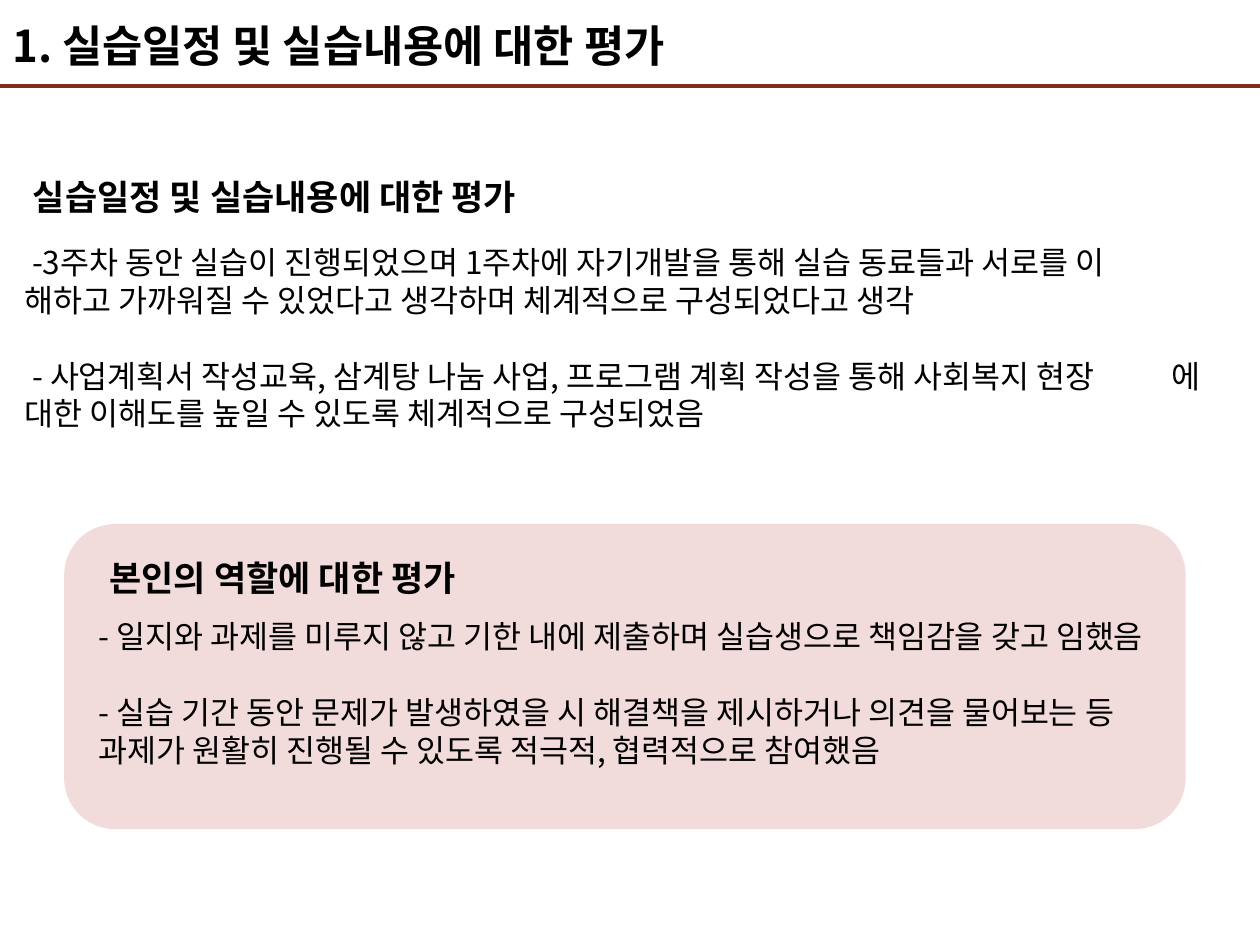
from pptx import Presentation
from pptx.dml.color import RGBColor
from pptx.enum.shapes import MSO_CONNECTOR as Line, MSO_SHAPE as Shape
from pptx.oxml.ns import qn
from pptx.util import Inches, Pt
from lxml.etree import SubElement as Sub

FONT = "Noto Sans CJK KR"
COLS, ROWS = 100, 75  # slide grid
CELL = Inches(0.1)
INK, RED, PINK = "000000", "802D20", "F2DCDB"
LEAD = 1.2  # line height per point of text


def color(code):
    return RGBColor.from_string(code)


def cells(*spans):
    return [round(span * CELL) for span in spans]


def add_run(para, words, size, bold):
    run = para.add_run()
    run.text = words
    font = run.font
    font.name, font.size, font.bold = FONT, Pt(size), bold
    font.color.rgb = color(INK)
    Sub(run._r.get_or_add_rPr(), qn("a:ea")).set("typeface", FONT)


def add_text(shapes, box, paras, size, bold=False, tab=None):
    """Each paragraph is a list of lines; paragraphs stand one line apart."""
    frame = shapes.add_textbox(*cells(*box)).text_frame
    frame.word_wrap = True
    frame.margin_top = Inches(0.08)
    for i, lines in enumerate(paras):
        para = frame.paragraphs[0] if i == 0 else frame.add_paragraph()
        para.line_spacing = Pt(size * LEAD)
        para.space_before = Pt(size * LEAD if i else 0)
        if tab:
            stops = Sub(para._p.get_or_add_pPr(), qn("a:tabLst"))
            Sub(stops, qn("a:tab"), pos=str(cells(tab)[0]), algn="l")
        for j, line in enumerate(lines):
            if j:
                para.add_line_break()
            add_run(para, line, size, bold)


def add_head(slide, box):
    """Slide title over a full-width rule."""
    x, y, w, h = box
    add_text(slide.shapes, (x, y + 0.7, 0.752 * w, 5.2),
             [["1. 실습일정 및 실습내용에 대한 평가"]], 25, True)
    rule = slide.shapes.add_connector(
        Line.STRAIGHT, *cells(x, y + h, x + w, y + h))
    rule.line.color.rgb = color(RED)
    rule.line.width = Pt(2.25)
    Sub(rule._element.spPr, qn("a:effectLst"))


def add_review(slide, box):
    """Heading with two points on the schedule."""
    x, y, w, h = box
    add_text(slide.shapes, (x, y, 45.9, 4.4),
             [[" 실습일정 및 실습내용에 대한 평가"]], 20, True)
    add_text(slide.shapes, (x, y + 5.4, w, h - 5.4), [
        [" -3주차 동안 실습이 진행되었으며 1주차에 자기개발을 통해 실습 동료들과 서로를 이",
         "해하고 가까워질 수 있었다고 생각하며 체계적으로 구성되었다고 생각"],
        [" - 사업계획서 작성교육, 삼계탕 나눔 사업, 프로그램 계획 작성을 통해 사회복지 현장"
         "\t에 대한 이해도를 높일 수 있도록 체계적으로 구성되었음"],
    ], 18, tab=91)


def add_card(slide, box):
    """Rounded panel on the trainee's own role."""
    x, y, w, h = box
    parts = slide.shapes.add_group_shape().shapes
    panel = parts.add_shape(Shape.ROUNDED_RECTANGLE, *cells(*box))
    panel.shadow.inherit = False
    panel.fill.solid()
    panel.fill.fore_color.rgb = color(PINK)
    panel.line.fill.background()
    add_text(parts, (x + 2.6, y + 1.8, 32.9, 4.4),
             [["본인의 역할에 대한 평가"]], 20, True)
    add_text(parts, (x + 1.7, y + 6.6, w - 1.8, 22.2), [
        ["- 일지와 과제를 미루지 않고 기한 내에 제출하며 실습생으로 책임감을 갖고 임했음"],
        ["- 실습 기간 동안 문제가 발생하였을 시 해결책을 제시하거나 의견을 물어보는 등 "
         "과제가 원활히 진행될 수 있도록 적극적, 협력적으로 참여했음"],
    ], 18)


def main():
    deck = Presentation()
    deck.slide_width, deck.slide_height = cells(COLS, ROWS)
    slide = deck.slides.add_slide(deck.slide_layouts[6])
    add_review(slide, (1, 13.1, COLS - 1, 21.6))
    add_card(slide, (5.1, 41.6, 89, 24.2))
    add_head(slide, (0, 0, COLS, 6.8))
    deck.save("out.pptx")


if __name__ == "__main__":
    main()
